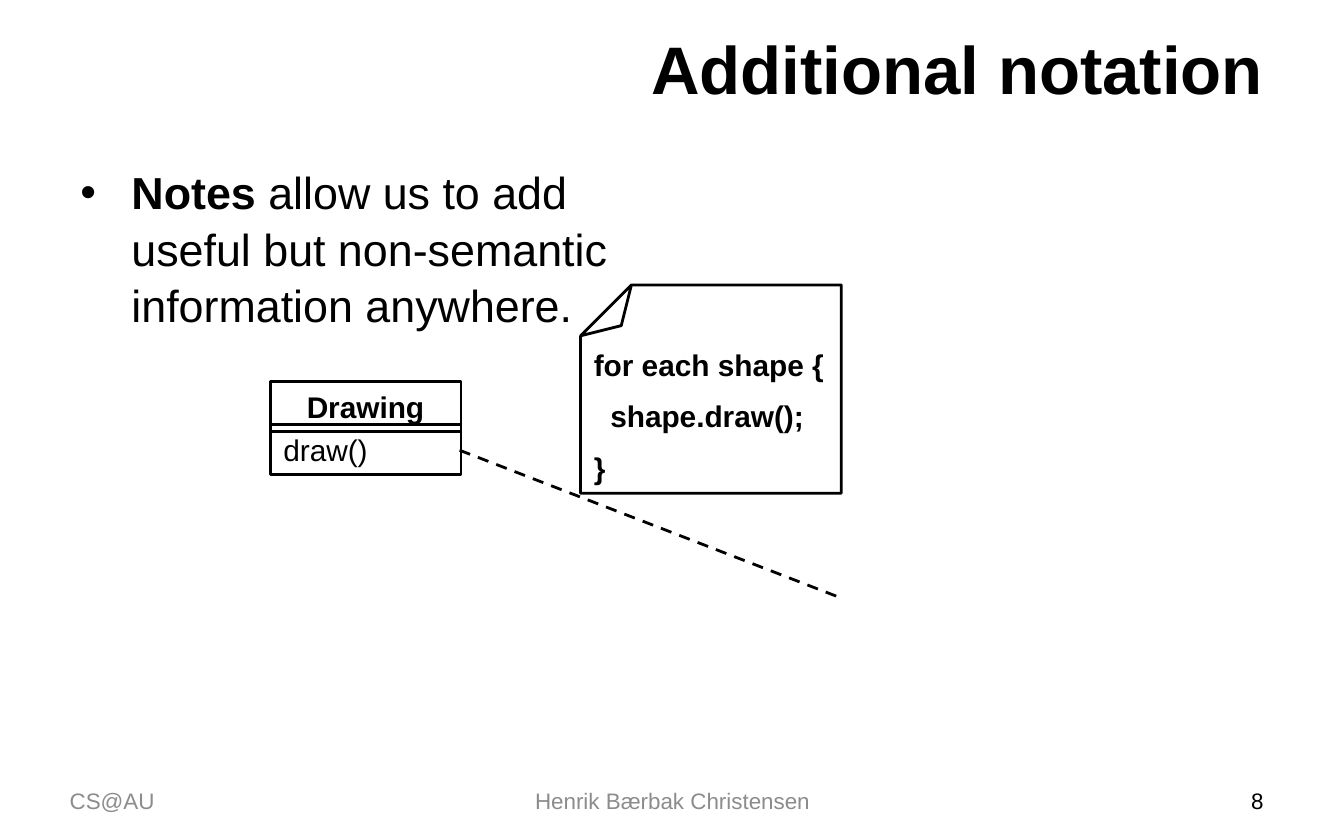
from typing import NamedTuple

from lxml import etree
from pptx import Presentation
from pptx.dml.color import RGBColor
from pptx.enum.dml import MSO_LINE
from pptx.enum.shapes import MSO_CONNECTOR, MSO_SHAPE
from pptx.enum.text import MSO_ANCHOR as Anchor, PP_ALIGN as Align
from pptx.oxml.ns import qn
from pptx.util import Inches, Pt

BLACK = RGBColor(0x00, 0x00, 0x00)
GREY = RGBColor(0x8C, 0x8C, 0x8C)
FONT = "Arial"
LINE_WIDTH = Pt(1.5)


class Area(NamedTuple):
    left: float
    top: float
    width: float
    height: float

    def lengths(self) -> list:
        return [Inches(value) for value in self]


class Label(NamedTuple):
    text: str
    area: Area
    size: int
    align: Align = Align.LEFT
    color: RGBColor = BLACK
    bold: bool = False


LABELS = [
    Label("Additional notation", Area(0.5, 0.18, 9, 0.65), 36, Align.RIGHT, bold=True),
    Label("CS@AU", Area(0.42, 5.79, 2.33, 0.33), 12, color=GREY),
    Label("Henrik Bærbak Christensen", Area(3.42, 5.79, 3.17, 0.33), 12, Align.CENTER, GREY),
    Label("8", Area(7.17, 5.79, 2.33, 0.33), 12, Align.RIGHT),
]
CLASS_ROWS = [
    Label("Drawing", Area(2.01, 2.84, 1.42, 0.37), 16, Align.CENTER, bold=True),
    Label("draw()", Area(2.01, 3.16, 1.42, 0.37), 16),
]
NOTE = Area(4.32, 2.12, 1.94, 1.55)
NOTE_CODE = Label("for each shape {\n  shape.draw();\n}", Area(4.32, 2.54, 1.94, 1.11), 16, bold=True)


def write(shape, label: Label, space_before: float = 0) -> None:
    frame = shape.text_frame
    frame.word_wrap = True
    frame.vertical_anchor = Anchor.MIDDLE
    frame.text = label.text
    for index, para in enumerate(frame.paragraphs):
        para.alignment = label.align
        para.space_before = Pt(space_before if index else 0)
        for span in para.runs:
            span.font.name = FONT
            span.font.size = Pt(label.size)
            span.font.bold = label.bold
            span.font.color.rgb = label.color


def add_label(page, label: Label, space_before: float = 0) -> None:
    write(page.shapes.add_textbox(*label.area.lengths()), label, space_before)


def add_outline(page, kind: MSO_SHAPE, area: Area):
    """Add an unfilled preset shape with a black outline."""
    shape = page.shapes.add_shape(kind, *area.lengths())
    shape.shadow.inherit = False
    shape.fill.background()
    shape.line.color.rgb = BLACK
    shape.line.width = LINE_WIDTH
    return shape


def add_note(page, area: Area) -> None:
    """Add a sheet turned so that its folded corner is at the top left."""
    note = add_outline(page, MSO_SHAPE.FOLDED_CORNER, area)
    note.rotation = 180
    guides = note._element.spPr.find(qn("a:prstGeom")).get_or_add_avLst()
    etree.SubElement(guides, qn("a:gd"), name="adj", fmla="val 24400")


def add_body(page, area: Area) -> None:
    frame = page.shapes.add_textbox(*area.lengths()).text_frame
    frame.word_wrap = True
    para = frame.paragraphs[0]
    para.line_spacing = 1.05
    properties = para._p.get_or_add_pPr()
    properties.set("marL", str(Inches(0.38)))
    properties.set("indent", str(-Inches(0.38)))
    etree.SubElement(properties, qn("a:buFont"), typeface=FONT)
    etree.SubElement(properties, qn("a:buChar"), char="•")
    spans = [("Notes", True),
             (" allow us to add useful but non-semantic information anywhere.", False)]
    for text, bold in spans:
        span = para.add_run()
        span.text = text
        span.font.name = FONT
        span.font.size = Pt(24)
        span.font.bold = bold
        span.font.color.rgb = BLACK


def add_dashed_link(page, start: tuple[float, float], end: tuple[float, float]) -> None:
    ends = [Inches(value) for value in (*start, *end)]
    link = page.shapes.add_connector(MSO_CONNECTOR.STRAIGHT, *ends)
    link.line.color.rgb = BLACK
    link.line.width = LINE_WIDTH
    link.line.dash_style = MSO_LINE.DASH
    etree.SubElement(link._element.spPr, qn("a:effectLst"))


def main() -> None:
    deck = Presentation()
    deck.slide_width, deck.slide_height = Inches(10), Inches(6.25)
    page = deck.slides.add_slide(deck.slide_layouts[6])

    for label in LABELS:
        add_label(page, label)
    add_body(page, Area(0.5, 1.16, 4.54, 4.54))

    add_note(page, NOTE)
    add_label(page, NOTE_CODE, space_before=8.5)

    for row in CLASS_ROWS:
        write(add_outline(page, MSO_SHAPE.RECTANGLE, row.area), row)
    add_dashed_link(page, (3.42, 3.35), (6.26, 4.45))

    deck.save("out.pptx")


if __name__ == "__main__":
    main()
